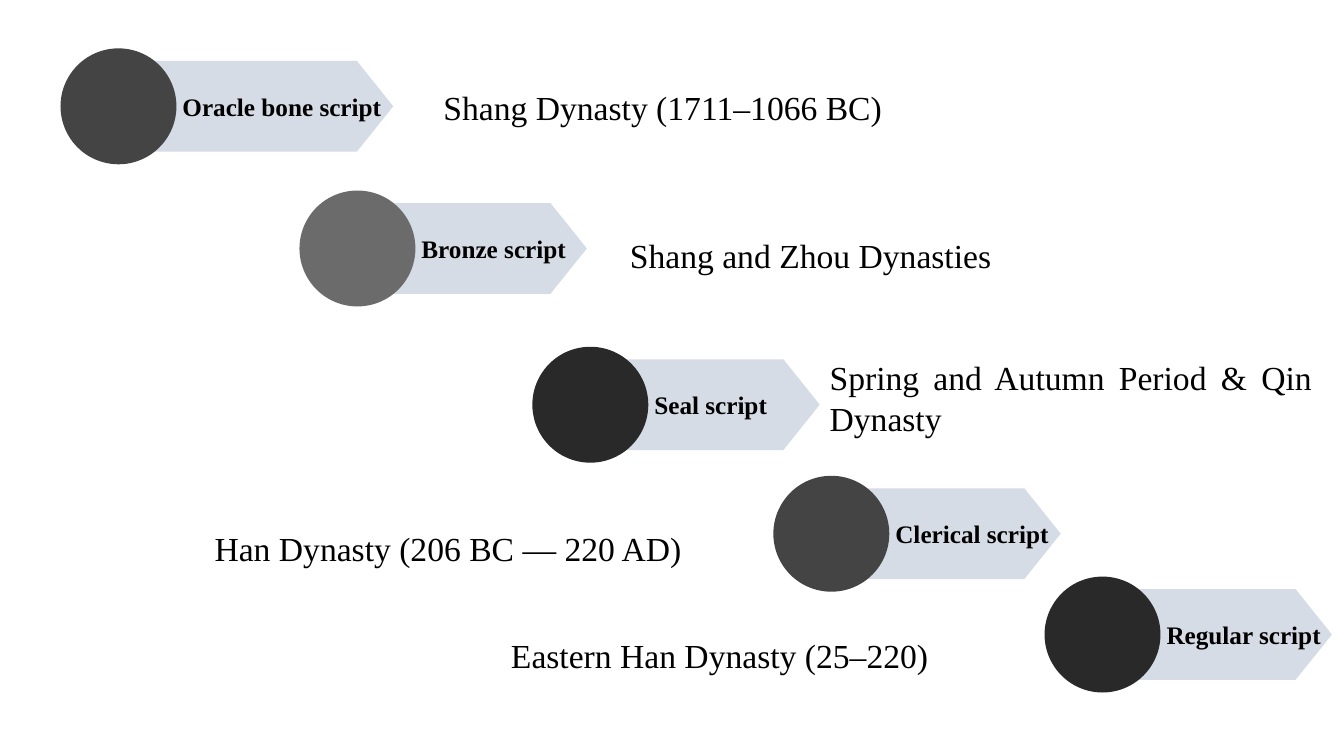
import dataclasses

import pptx
import pptx.dml.color
import pptx.enum.shapes
import pptx.enum.text
import pptx.util

Inches = pptx.util.Inches
Shape = pptx.enum.shapes.MSO_SHAPE
Align = pptx.enum.text.PP_ALIGN


@dataclasses.dataclass(frozen=True)
class Theme:
    font: str = "Times New Roman"
    ink: str = "000000"
    arrow: str = "D6DCE5"
    dark: str = "292929"
    medium: str = "444444"
    light: str = "6B6B6B"
    label_size: int = 18
    period_size: int = 24


class ScriptTimeline:
    """Draws the stages of Chinese writing as stepped arrows with their periods."""

    DISC = 1.15
    ARROW_HEIGHT = 0.9
    LABEL_START = 1.21

    def __init__(self, slide, theme):
        self.slide = slide
        self.theme = theme

    def set_text(self, frame, text, size, align, bold=False):
        frame.text = text
        frame.vertical_anchor = pptx.enum.text.MSO_ANCHOR.MIDDLE
        paragraph = frame.paragraphs[0]
        paragraph.alignment = align
        font = paragraph.runs[0].font
        font.name = self.theme.font
        font.size = pptx.util.Pt(size)
        font.bold = bold
        font.color.rgb = pptx.dml.color.RGBColor.from_string(self.theme.ink)
        return paragraph

    def filled(self, kind, left, top, width, height, color):
        shape = self.slide.shapes.add_shape(
            kind, Inches(left), Inches(top), Inches(width), Inches(height))
        shape.shadow.inherit = False
        shape.fill.solid()
        shape.fill.fore_color.rgb = pptx.dml.color.RGBColor.from_string(color)
        shape.line.fill.background()
        return shape

    def stage(self, name, left, top, color, arrow_offset=0.93, arrow_width=1.92):
        arrow_top = top + (self.DISC - self.ARROW_HEIGHT) / 2
        arrow = self.filled(Shape.PENTAGON, left + arrow_offset, arrow_top,
                            arrow_width, self.ARROW_HEIGHT, self.theme.arrow)
        arrow.adjustments[0] = 0.4
        label = arrow.text_frame
        label.word_wrap = False
        label.margin_left = Inches(self.LABEL_START - arrow_offset)
        label.margin_right = 0
        paragraph = self.set_text(label, name, self.theme.label_size, Align.JUSTIFY, bold=True)
        paragraph.space_after = pptx.util.Pt(6)
        self.filled(Shape.OVAL, left, top, self.DISC, self.DISC, color)

    def period(self, text, left, top, width=5.14, height=0.54,
               align=Align.LEFT, spacing=1.2):
        box = self.slide.shapes.add_textbox(
            Inches(left), Inches(top), Inches(width), Inches(height))
        box.text_frame.word_wrap = True
        paragraph = self.set_text(box.text_frame, text, self.theme.period_size, align)
        paragraph.line_spacing = spacing


def main():
    presentation = pptx.Presentation()
    presentation.slide_width = Inches(13.33)
    presentation.slide_height = Inches(7.5)
    theme = Theme()
    timeline = ScriptTimeline(
        presentation.slides.add_slide(presentation.slide_layouts[6]), theme)

    timeline.stage("Oracle bone script", 0.6, 0.48, theme.medium,
                   arrow_offset=0.85, arrow_width=2.45)
    for name, left, top, color in (
        ("Bronze script", 2.97, 1.89, theme.light),
        ("Seal script", 5.28, 3.44, theme.dark),
        ("Regular script", 10.36, 5.72, theme.dark),
        ("Clerical script", 7.67, 4.72, theme.medium),
    ):
        timeline.stage(name, left, top, color)

    for text, left, top in (
        ("Eastern Han Dynasty (25–220)", 4.97, 6.19),
        ("Han Dynasty (206 BC — 220 AD)", 2.03, 5.13),
        ("Shang Dynasty (1711–1066 BC)", 4.3, 0.75),
        ("Shang and Zhou Dynasties", 6.15, 2.22),
    ):
        timeline.period(text, left, top)
    timeline.period("Spring and Autumn Period & Qin Dynasty", 8.13, 3.49,
                    width=4.98, height=0.91, align=Align.JUSTIFY, spacing=1.0)

    presentation.save("out.pptx")


if __name__ == "__main__":
    main()
